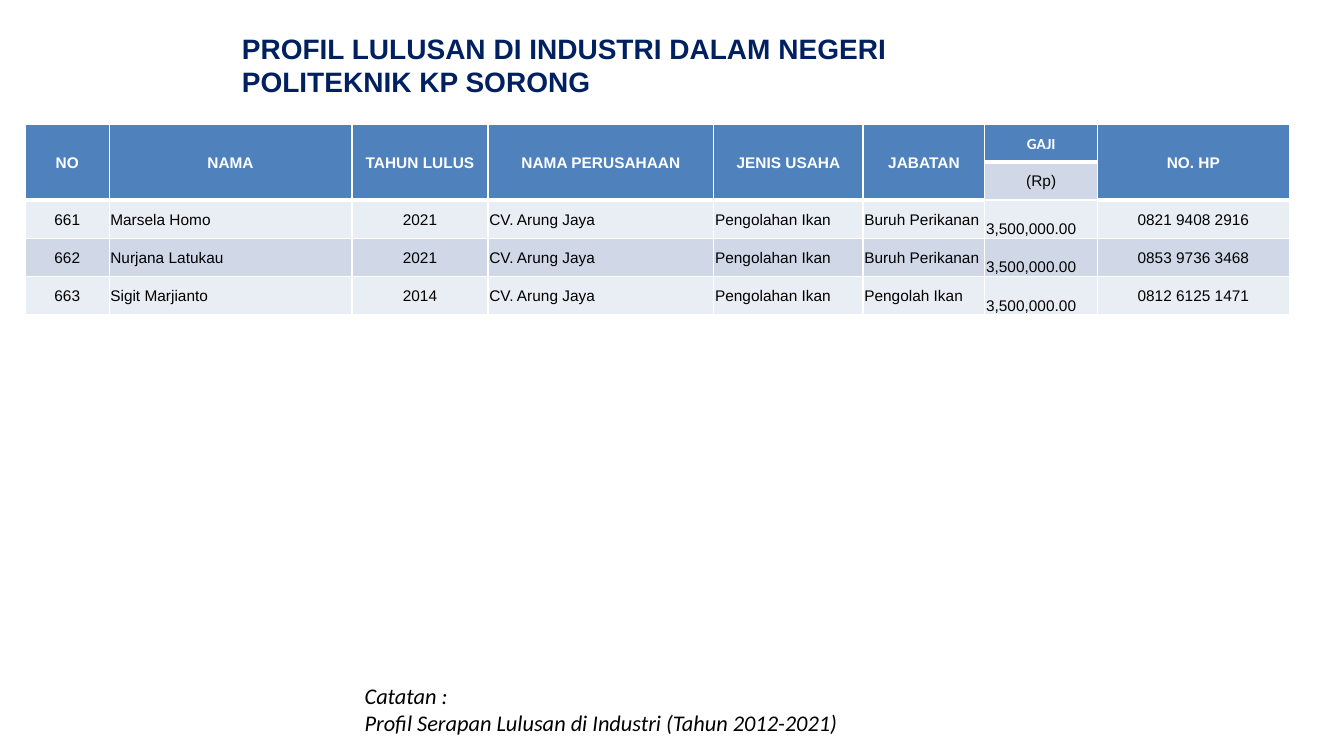
from pptx import Presentation
from pptx import util as u
from pptx.dml.color import RGBColor
from pptx.enum import text
from pptx.oxml import parse_xml
from pptx.oxml.ns import nsdecls

COLORS = {
    "navy": "002060",
    "blue": "4F81BD",
    "mid": "D0D8E8",
    "pale": "E9EDF4",
    "white": "FFFFFF",
    "black": "000000",
}
HEADS = ["NO", "NAMA", "TAHUN LULUS", "NAMA PERUSAHAAN",
         "JENIS USAHA", "JABATAN", "GAJI", "NO. HP"]
FIRM, TRADE, PAY = "CV. Arung Jaya", "Pengolahan Ikan", "3,500,000.00"
GRADS = [
    ["661", "Marsela Homo", "2021", FIRM, TRADE, "Buruh Perikanan", PAY, "0821 9408 2916"],
    ["662", "Nurjana Latukau", "2021", FIRM, TRADE, "Buruh Perikanan", PAY, "0853 9736 3468"],
    ["663", "Sigit Marjianto", "2014", FIRM, TRADE, "Pengolah Ikan", PAY, "0812 6125 1471"],
]
WIDTHS = [2.11, 6.12, 3.43, 5.69, 3.76, 3.07, 2.84, 4.83]
HEIGHTS = [0.94] + [0.96] * 4
CENTERED = {0, 2, 7}
SALARY = HEADS.index("GAJI")


class Deck:
    def __init__(self):
        self.prs = Presentation()
        self.prs.slide_width = u.Cm(33.87)
        self.prs.slide_height = u.Cm(19.05)
        self.slide = self.prs.slides.add_slide(self.prs.slide_layouts[5])

    def color(self, name):
        return RGBColor.from_string(COLORS[name])

    def fill_text(self, frame, lines, size, color="black", font="Arial",
                  bold=False, italic=False, align=text.PP_ALIGN.LEFT):
        for i, line in enumerate(lines):
            para = frame.add_paragraph() if i else frame.paragraphs[0]
            para.alignment = align
            run = para.add_run()
            run.text = line
            run.font.size = u.Pt(size)
            run.font.name = font
            run.font.bold = bold
            run.font.italic = italic
            run.font.color.rgb = self.color(color)

    def setup(self, frame):
        frame.word_wrap = True
        frame.auto_size = text.MSO_AUTO_SIZE.NONE
        frame.vertical_anchor = text.MSO_ANCHOR.TOP

    def title(self, lines, left, top, width, height):
        shape = self.slide.shapes.title
        shape.left, shape.top = u.Cm(left), u.Cm(top)
        shape.width, shape.height = u.Cm(width), u.Cm(height)
        self.setup(shape.text_frame)
        self.fill_text(shape.text_frame, lines, 20, "navy", bold=True)

    def note(self, lines, left, top, width, height):
        box = self.slide.shapes.add_textbox(
            u.Cm(left), u.Cm(top), u.Cm(width), u.Cm(height))
        self.setup(box.text_frame)
        self.fill_text(box.text_frame, lines, 16, font="Calibri", italic=True)

    def border(self, cell, above, below):
        props = cell._tc.get_or_add_tcPr()
        sides = {"lnL": 1, "lnR": 1, "lnT": above, "lnB": below}
        for i, (side, width) in enumerate(sides.items()):
            props.insert(i, parse_xml(
                f'<a:{side} {nsdecls("a")} w="{u.Pt(width)}"><a:solidFill>'
                f'<a:srgbClr val="{COLORS["white"]}"/></a:solidFill></a:{side}>'))

    def cell(self, cell, words, fill, above, below, anchor="MIDDLE", **style):
        cell.margin_left = cell.margin_right = cell.margin_top = u.Cm(0.03)
        cell.margin_bottom = 0
        cell.vertical_anchor = text.MSO_ANCHOR[anchor]
        cell.fill.solid()
        cell.fill.fore_color.rgb = self.color(fill)
        self.border(cell, above, below)
        if words:
            self.fill_text(cell.text_frame, [words], 11, **style)

    def table(self, left, top):
        mid = text.PP_ALIGN.CENTER
        grid = self.slide.shapes.add_table(
            len(HEIGHTS), len(WIDTHS), u.Cm(left), u.Cm(top),
            u.Cm(sum(WIDTHS)), u.Cm(sum(HEIGHTS))).table
        for row, height in zip(grid.rows, HEIGHTS):
            row.height = u.Cm(height)
        for c, width in enumerate(WIDTHS):
            grid.columns[c].width = u.Cm(width)
            pay = c == SALARY
            edge = 1 if pay else 3
            self.cell(grid.cell(0, c), HEADS[c], "blue", 1, 3, color="white",
                      font="Calibri" if pay else "Arial", bold=True, align=mid)
            self.cell(grid.cell(1, c), "(Rp)" if pay else "",
                      "mid" if pay else "blue", 3, edge, align=mid)
            if not pay:
                grid.cell(0, c).merge(grid.cell(1, c))
            for r, grad in enumerate(GRADS):
                self.cell(grid.cell(r + 2, c), grad[c], "mid" if r % 2 else "pale",
                          1 if r else edge, 1, "BOTTOM" if pay else "MIDDLE",
                          align=mid if c in CENTERED else text.PP_ALIGN.LEFT)


def main():
    deck = Deck()
    deck.title(["PROFIL LULUSAN DI INDUSTRI DALAM NEGERI", "POLITEKNIK KP SORONG"],
               5.84, 0.66, 26.67, 1.96)
    deck.note(["Catatan :", "Profil Serapan Lulusan di Industri (Tahun 2012-2021)"],
              8.94, 17.07, 17.5, 1.63)
    deck.table(0.64, 3.14)
    deck.prs.save("out.pptx")


if __name__ == "__main__":
    main()
